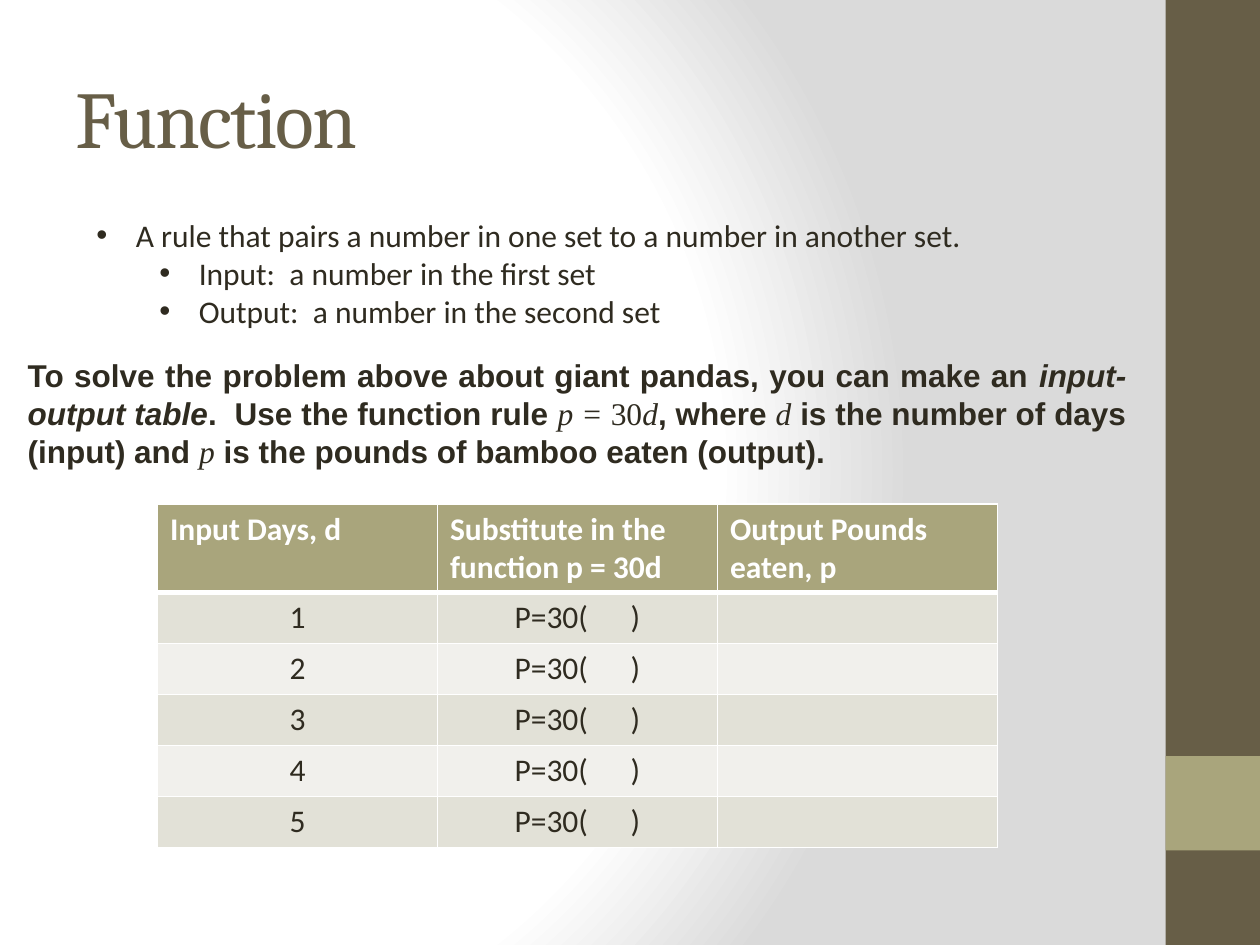
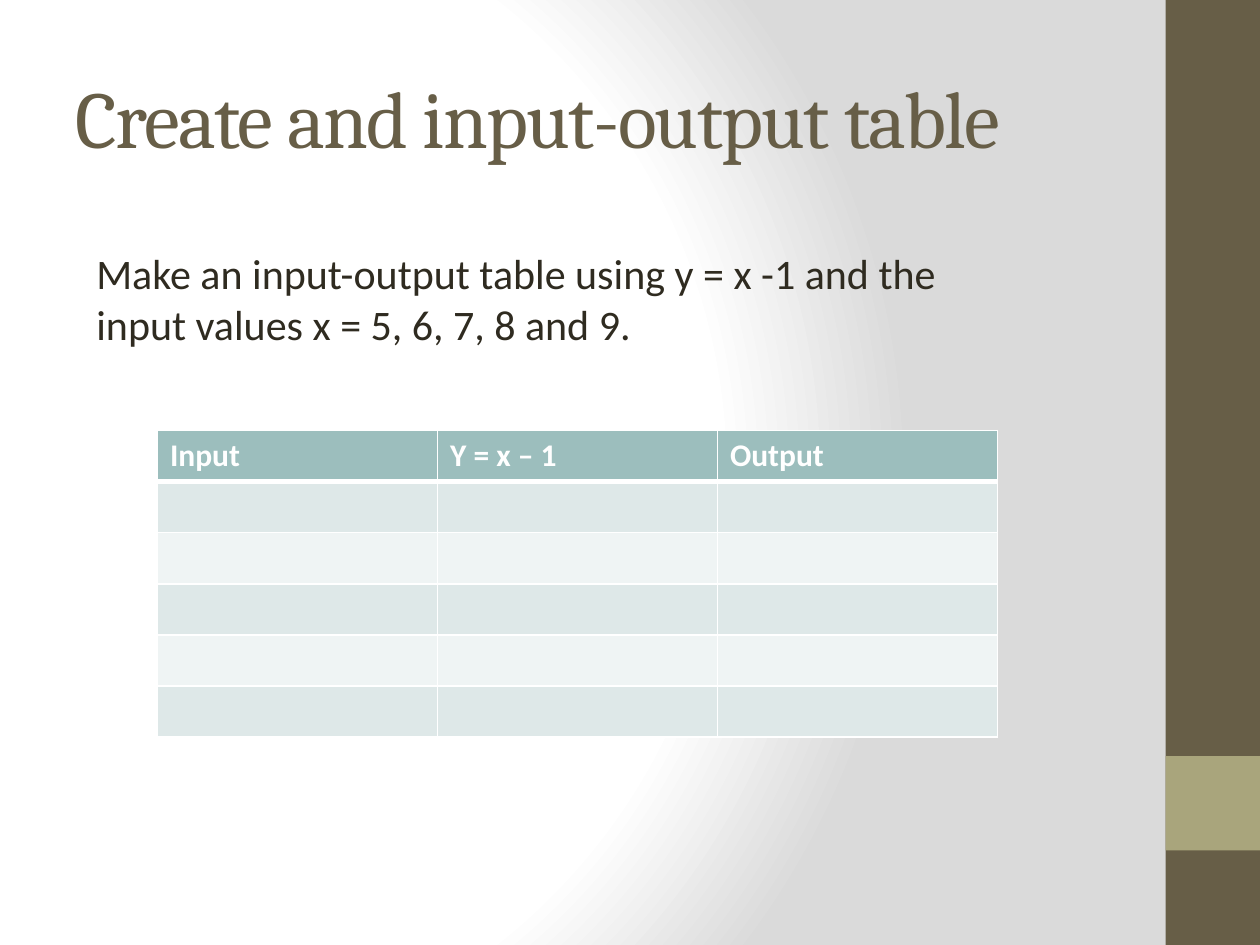
from lxml import etree
from pptx import Presentation
from pptx.dml.color import RGBColor
from pptx.enum import shapes, text
from pptx.oxml import ns
from pptx.util import Pt

# Shared style
BROWN, OLIVE, TEAL, INK, WHITE = "675E47", "A9A57C", "9CBEBD", "2F2B20", "FFFFFF"
OLIVE_BANDS, TEAL_BANDS = ("E2E1D7", "F1F0EC"), ("DEE8E8", "EFF4F4")
HEADING, BODY, PROSE, MATH = "Cambria", "Calibri", "Arial", "Times New Roman"
BACKDROP = [(0, WHITE), (75, WHITE), (100, "DADADA")]
ROW_HEIGHT = 29.2


def rgb(value):
    return RGBColor.from_string(value)


def sub(parent, tag, **attributes):
    return etree.SubElement(parent, ns.qn(tag), attributes)


def style(run, size, font=BODY, color=INK, bold=False, italic=False):
    run.font.size, run.font.name = Pt(size), font
    run.font.color.rgb = rgb(color)
    run.font.bold, run.font.italic = bold, italic


class Deck:
    def __init__(self):
        self.prs = Presentation()
        self.prs.slide_width, self.prs.slide_height = Pt(720), Pt(540)
        self.slide = None
        self.backdrop()

    def backdrop(self):
        """Circular gradient on the master, shared by every slide."""
        master = self.prs.slide_master
        master.background.fill.gradient()
        gradient = master.element.find(".//" + ns.qn("a:gradFill"))
        for child in list(gradient):
            gradient.remove(child)
        stops = sub(gradient, "a:gsLst")
        for position, color in BACKDROP:
            stop = sub(stops, "a:gs", pos=str(position * 1000))
            sub(stop, "a:srgbClr", val=color)
        circle = sub(gradient, "a:path", path="circle")
        sub(circle, "a:fillToRect", l="20000", t="50000", r="100000", b="50000")

    def new_slide(self, heading):
        self.slide = self.prs.slides.add_slide(self.prs.slide_layouts[5])
        self.band(0, 540, BROWN)
        self.band(432, 54, OLIVE)
        self.title(heading)

    def band(self, top, height, color):
        band = self.slide.shapes.add_shape(
            shapes.MSO_SHAPE.RECTANGLE, Pt(666), Pt(top), Pt(54), Pt(height))
        band.shadow.inherit = False
        band.fill.solid()
        band.fill.fore_color.rgb = rgb(color)
        band.line.fill.background()

    def title(self, heading):
        title = self.slide.shapes.title
        title.left, title.top, title.width, title.height = Pt(36), Pt(21.6), Pt(600), Pt(90)
        frame = title.text_frame
        frame.text = heading
        frame.auto_size = text.MSO_AUTO_SIZE.NONE
        frame.vertical_anchor = text.MSO_ANCHOR.MIDDLE
        paragraph = frame.paragraphs[0]
        paragraph.alignment = text.PP_ALIGN.LEFT
        run = paragraph.runs[0]
        style(run, 46, HEADING, BROWN)
        run.font._element.set("spc", "-100")

    def text_box(self, left, top, width, height):
        box = self.slide.shapes.add_textbox(Pt(left), Pt(top), Pt(width), Pt(height))
        box.text_frame.word_wrap = True
        return box.text_frame

    def note(self, wording, size, *place):
        frame = self.text_box(*place)
        frame.text = wording
        style(frame.paragraphs[0].runs[0], size)

    def bullets(self, items, size, *place):
        frame = self.text_box(*place)
        frame.text = "\n".join(wording for _, wording in items)
        for paragraph, (level, _) in zip(frame.paragraphs, items):
            paragraph.level = level
            props = paragraph._p.get_or_add_pPr()
            props.set("marL", str(Pt(22.5 + 36 * level)))
            props.set("indent", str(Pt(-22.5)))
            sub(props, "a:buFont", typeface="Arial")
            sub(props, "a:buChar", char="•")
            style(paragraph.runs[0], size)

    def mixed_text(self, pieces, size, *place):
        paragraph = self.text_box(*place).paragraphs[0]
        paragraph.alignment = text.PP_ALIGN.JUSTIFY
        for wording, font, italic in pieces:
            run = paragraph.add_run()
            run.text = wording
            style(run, size, font, bold=font == PROSE, italic=italic)

    def table(self, rows, top, header_height, header_color, bands):
        height = header_height + ROW_HEIGHT * (len(rows) - 1)
        grid = self.slide.shapes.add_table(
            len(rows), len(rows[0]), Pt(90), Pt(top), Pt(480), Pt(height)).table
        for r, values in enumerate(rows):
            grid.rows[r].height = Pt(ROW_HEIGHT if r else header_height)
            for c, value in enumerate(values):
                cell = grid.cell(r, c)
                self.borders(cell, top=3 if r == 1 else 1, bottom=1 if r else 3)
                cell.fill.solid()
                cell.fill.fore_color.rgb = rgb(bands[(r - 1) % 2] if r else header_color)
                cell.text_frame.text = value
                paragraph = cell.text_frame.paragraphs[0]
                paragraph.alignment = text.PP_ALIGN.CENTER if r else text.PP_ALIGN.LEFT
                for run in paragraph.runs:
                    style(run, 18, color=INK if r else WHITE, bold=not r)

    def borders(self, cell, top, bottom):
        props = cell._tc.get_or_add_tcPr()
        for side, width in (("L", 1), ("R", 1), ("T", top), ("B", bottom)):
            line = sub(props, "a:ln" + side, w=str(Pt(width)))
            sub(sub(line, "a:solidFill"), "a:srgbClr", val=WHITE)


def function_slide(deck):
    deck.new_slide("Function")
    deck.bullets([
        (0, "A rule that pairs a number in one set to a number in another set."),
        (1, "Input:  a number in the first set"),
        (1, "Output:  a number in the second set"),
    ], 18, 48, 120, 564, 116.6)
    deck.mixed_text([
        ("To solve the problem above about giant pandas, you can make an ", PROSE, False),
        ("input-output table", PROSE, True),
        (".  Use the function rule ", PROSE, False),
        ("p = ", MATH, True),
        ("30", MATH, False),
        ("d", MATH, True),
        (", where ", PROSE, False),
        ("d", MATH, True),
        (" is the number of days (input) and ", PROSE, False),
        ("p", MATH, True),
        (" is the pounds of bamboo eaten (output).", PROSE, False),
    ], 18, 8.8, 200, 642, 72.7)
    header = ["Input Days, d", "Substitute in the function p = 30d", "Output Pounds eaten, p"]
    days = [[str(day), "P=30(      )", ""] for day in range(1, 6)]
    deck.table([header] + days, 288, 50.4, OLIVE, OLIVE_BANDS)


def practice_slide(deck):
    deck.new_slide("Create and input-output table")
    deck.note("Make an input-output table using y = x -1 and the input values "
              "x = 5, 6, 7, 8 and 9.", 24, 48, 138, 540, 65.4)
    blanks = [[""] * 3 for _ in range(5)]
    deck.table([["Input", "Y = x – 1", "Output"]] + blanks, 246, ROW_HEIGHT, TEAL, TEAL_BANDS)


def main():
    deck = Deck()
    function_slide(deck)
    practice_slide(deck)
    deck.prs.save("out.pptx")


if __name__ == "__main__":
    main()
